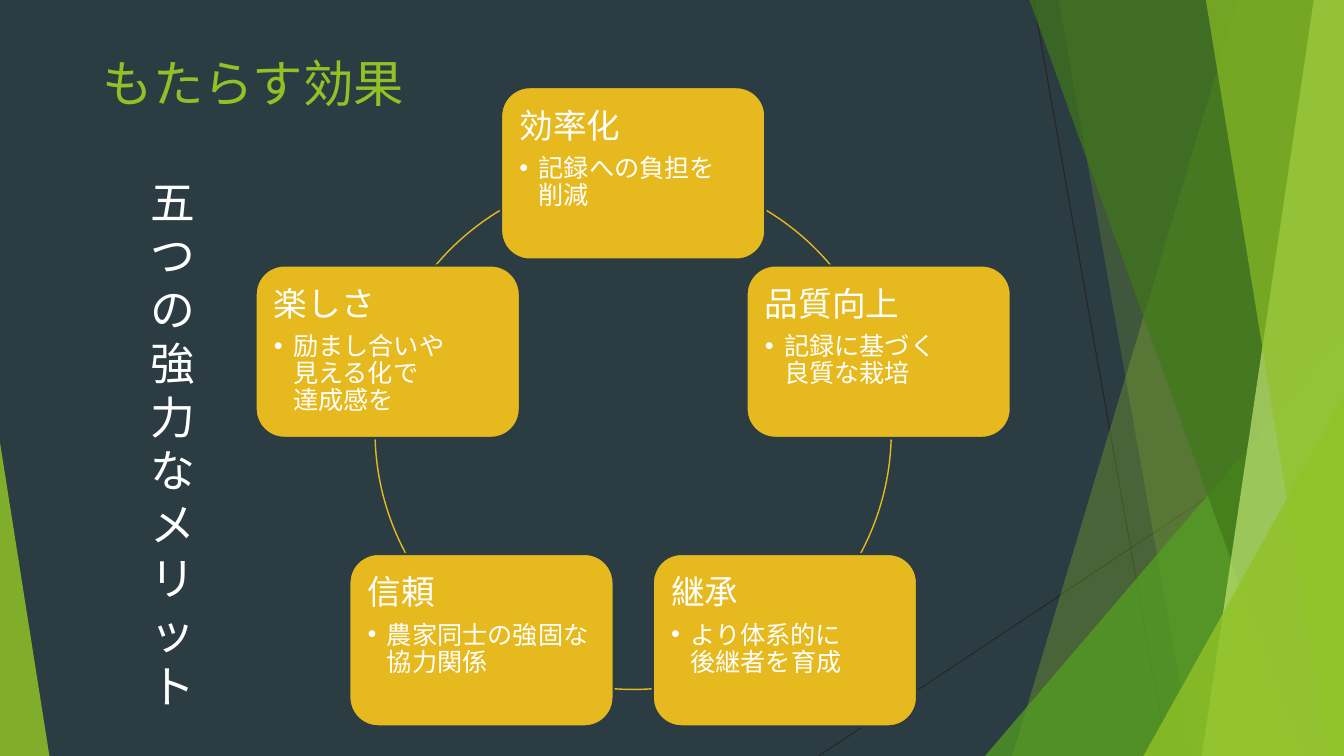
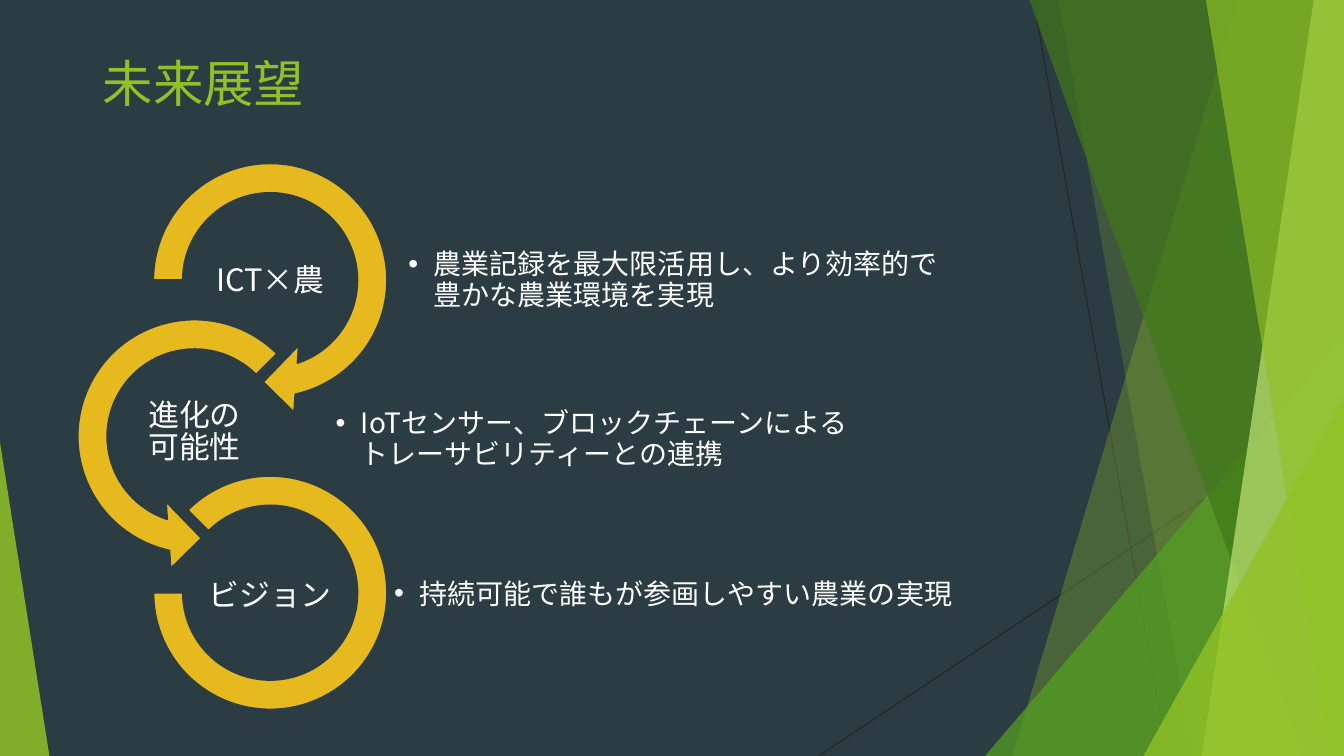
import math
from dataclasses import dataclass

import lxml.etree
import pptx
import pptx.dml.color
import pptx.enum.shapes
import pptx.enum.text
import pptx.oxml.ns
import pptx.util

SHAPE = pptx.enum.shapes.MSO_SHAPE
ALIGN = pptx.enum.text.PP_ALIGN
ANCHOR = pptx.enum.text.MSO_ANCHOR
Inches = pptx.util.Inches
Pt = pptx.util.Pt
qn = pptx.oxml.ns.qn


@dataclass(frozen=True)
class Style:
    size: float
    pitch: float
    color: str = "FFFFFF"
    after: float = 0
    indent: float = 0
    align: object = ALIGN.LEFT


class Theme:
    font = "Noto Sans CJK JP"
    width, height = 13.33, 7.5
    ground, gold, line = "2C3C43", "E6B91E", "262626"
    lime, green, forest, pale = "90C226", "54A021", "3F7819", "C0E474"
    title = Style(36, 44, lime)
    upright = Style(32, 38.4)
    card_head = Style(24, 28, after=7.5)
    card_item = Style(18, 19.3, indent=0.19)
    ring_label = Style(22, 23, align=ALIGN.CENTER)
    ring_item = Style(20, 21.8, indent=0.25)


RAYS = [((10.25, 0), (11.58, 7.5)), ((13.33, 4.03), (8.12, 7.5))]
FACETS = [
    ("band", 12.28, 10.04, Theme.lime, 30),
    ("band", 10.5, 11.83, Theme.lime, 20),
    ("wedge", (9.77, 3.33, 3.56, 4.17), 1, Theme.green, 72),
    ("band", 10.21, 12.91, Theme.forest, 70),
    ("band", 13.03, 11.92, Theme.pale, 70),
    ("band", 11.96, 13.18, Theme.lime, 65),
    ("wedge", (11.34, 3.93, 1.99, 3.57), 1, Theme.lime, 80),
    ("wedge", (0, 4.39, 0.49, 3.11), 0, Theme.lime, 85),
]

MERIT_TITLE = "もたらす効果"
MERIT_HEADING = "五つの強力なメリット"
MERITS = [
    ("効率化", "記録への負担を\v削減"),
    ("品質向上", "記録に基づく\v良質な栽培"),
    ("継承", "より体系的に\v後継者を育成"),
    ("信頼", "農家同士の強固な協力関係"),
    ("楽しさ", "励まし合いや\v見える化で\v達成感を"),
]
CYCLE_CENTER, CYCLE_RADIUS = (6.28, 4.28), 2.56
CARD_SIZE = (2.62, 1.71)
ARCS = [(301.1, 319.9), (1.8, 28.2), (85.7, 94.3), (151.8, 178.2), (220.1, 238.9)]

OUTLOOK_TITLE = "未来展望"
OUTLOOK = [
    dict(label="ICT×農", item="農業記録を最大限活用し、より効率的で\v豊かな農業環境を実現",
         kind=SHAPE.CIRCULAR_ARROW, adjust=(0.1098, 11.423, 45, 108, 0.125),
         center=(2.68, 2.78), size=2.7, label_y=2.79, item_box=(4.04, 2.24, 6.09, 1.08)),
    dict(label="進化の\v可能性", item="IoTセンサー、ブロックチェーンによる\vトレーサビリティーとの連携",
         kind=SHAPE.LEFT_CIRCULAR_ARROW, adjust=(0.1098, 11.423, 63, 189, 0.125),
         center=(1.93, 4.33), size=2.7, label_y=4.29, item_box=(3.32, 3.82, 5.27, 1.08)),
    dict(label="ビジョン", item="持続可能で誰もが参画しやすい農業の実現",
         kind=SHAPE.BLOCK_ARC, adjust=(135, 108, 0.1274),
         center=(2.68, 5.88), size=2.32, label_y=5.92, item_box=(3.9, 5.36, 6.03, 1.08)),
]
LABEL_SIZE = (1.5, 0.75)


def rgb(value):
    return pptx.dml.color.RGBColor.from_string(value)


def apply(target, values):
    for name, value in values.items():
        setattr(target, name, value)


def centered(center, size):
    return (center[0] - size[0] / 2, center[1] - size[1] / 2, *size)


def paint(shape, fill=None, line=None, weight=1.5, alpha=None):
    shape.shadow.inherit = False
    if fill:
        shape.fill.solid()
        shape.fill.fore_color.rgb = rgb(fill)
    else:
        shape.fill.background()
    if line:
        shape.line.color.rgb = rgb(line)
        shape.line.width = Pt(weight)
    else:
        shape.line.fill.background()
    if alpha:
        color = shape._element.spPr.find(qn("a:solidFill"))[0]
        lxml.etree.SubElement(color, qn("a:alpha"), val=str(alpha * 1000))


def add_preset(page, kind, box, adjust=(), **look):
    shape = page.shapes.add_shape(kind, *map(Inches, box))
    for index, value in enumerate(adjust):
        shape.adjustments[index] = value
    paint(shape, **look)
    return shape


def write(shape, lines, inset=(0.1, 0.1), anchor=ANCHOR.TOP):
    frame = shape.text_frame
    across, down = map(Inches, inset)
    apply(frame, dict(word_wrap=True, vertical_anchor=anchor, margin_left=across,
                      margin_right=across, margin_top=down, margin_bottom=down))
    for index, (text, style) in enumerate(lines):
        para = frame.add_paragraph() if index else frame.paragraphs[0]
        para.text = text
        if style.indent:
            props = para._p.get_or_add_pPr()
            props.set("marL", str(Inches(style.indent)))
            props.set("indent", str(-Inches(style.indent)))
            lxml.etree.SubElement(props, qn("a:buFont"), typeface="Arial")
            lxml.etree.SubElement(props, qn("a:buChar"), char="•")
        apply(para, dict(alignment=style.align, line_spacing=Pt(style.pitch),
                         space_after=Pt(style.after)))
        for span in para.runs:
            apply(span.font, dict(name=Theme.font, size=Pt(style.size)))
            span.font.color.rgb = rgb(style.color)
            lxml.etree.SubElement(span.font._element, qn("a:ea"), typeface=Theme.font)


def add_text(page, box, text, style, **layout):
    write(page.shapes.add_textbox(*map(Inches, box)), [(text, style)], **layout)


def add_band(page, top, bottom, color, alpha):
    builder = page.shapes.build_freeform(Inches(top), 0)
    corners = [(Theme.width, 0), (Theme.width, Theme.height), (bottom, Theme.height)]
    builder.add_line_segments([(Inches(x), Inches(y)) for x, y in corners])
    paint(builder.convert_to_shape(), fill=color, alpha=alpha)


def add_page(deck, title):
    page = deck.slides.add_slide(deck.slide_layouts[6])
    page.background.fill.solid()
    page.background.fill.fore_color.rgb = rgb(Theme.ground)
    for start, end in RAYS:
        ray = page.shapes.add_connector(
            pptx.enum.shapes.MSO_CONNECTOR.STRAIGHT, *map(Inches, start + end))
        ray.line.color.rgb = rgb(Theme.line)
        ray.line.width = Pt(0.75)
        lxml.etree.SubElement(ray._element.spPr, qn("a:effectLst"))
    for kind, place, slant, color, alpha in FACETS:
        if kind == "band":
            add_band(page, place, slant, color, alpha)
        else:
            add_preset(page, SHAPE.ISOSCELES_TRIANGLE, place, [slant], fill=color, alpha=alpha)
    add_text(page, (0.92, 0.46, 9.4, 1.44), title, Theme.title, inset=(0.1, 0.05))
    return page


def add_merits(deck):
    page = add_page(deck, MERIT_TITLE)
    ring = centered(CYCLE_CENTER, (2 * CYCLE_RADIUS, 2 * CYCLE_RADIUS))
    for start, end in ARCS:
        add_preset(page, SHAPE.ARC, ring, (start * 0.6, end * 0.6), line=Theme.gold, weight=1)
    for index, (head, item) in enumerate(MERITS):
        turn = math.tau * index / len(MERITS)
        center = (CYCLE_CENTER[0] + CYCLE_RADIUS * math.sin(turn),
                  CYCLE_CENTER[1] - CYCLE_RADIUS * math.cos(turn))
        card = add_preset(page, SHAPE.ROUNDED_RECTANGLE, centered(center, CARD_SIZE),
                          fill=Theme.gold, line=Theme.ground)
        write(card, [(head, Theme.card_head), (item, Theme.card_item)])
    add_text(page, (1.39, 1.68, 0.81, 5.49), "\v".join(MERIT_HEADING), Theme.upright,
             inset=(0.1, 0.05))


def add_outlook(deck):
    page = add_page(deck, OUTLOOK_TITLE)
    for step in OUTLOOK:
        size = step["size"]
        add_preset(page, step["kind"], centered(step["center"], (size, size)), step["adjust"],
                   fill=Theme.gold, line=Theme.ground)
        add_text(page, step["item_box"], step["item"], Theme.ring_item,
                 inset=(0.01, 0.01), anchor=ANCHOR.MIDDLE)
        label_center = (step["center"][0], step["label_y"])
        add_text(page, centered(label_center, LABEL_SIZE), step["label"], Theme.ring_label,
                 inset=(0.02, 0.02), anchor=ANCHOR.MIDDLE)


def main():
    deck = pptx.Presentation()
    apply(deck, dict(slide_width=Inches(Theme.width), slide_height=Inches(Theme.height)))
    add_merits(deck)
    add_outlook(deck)
    deck.save("out.pptx")


if __name__ == "__main__":
    main()
